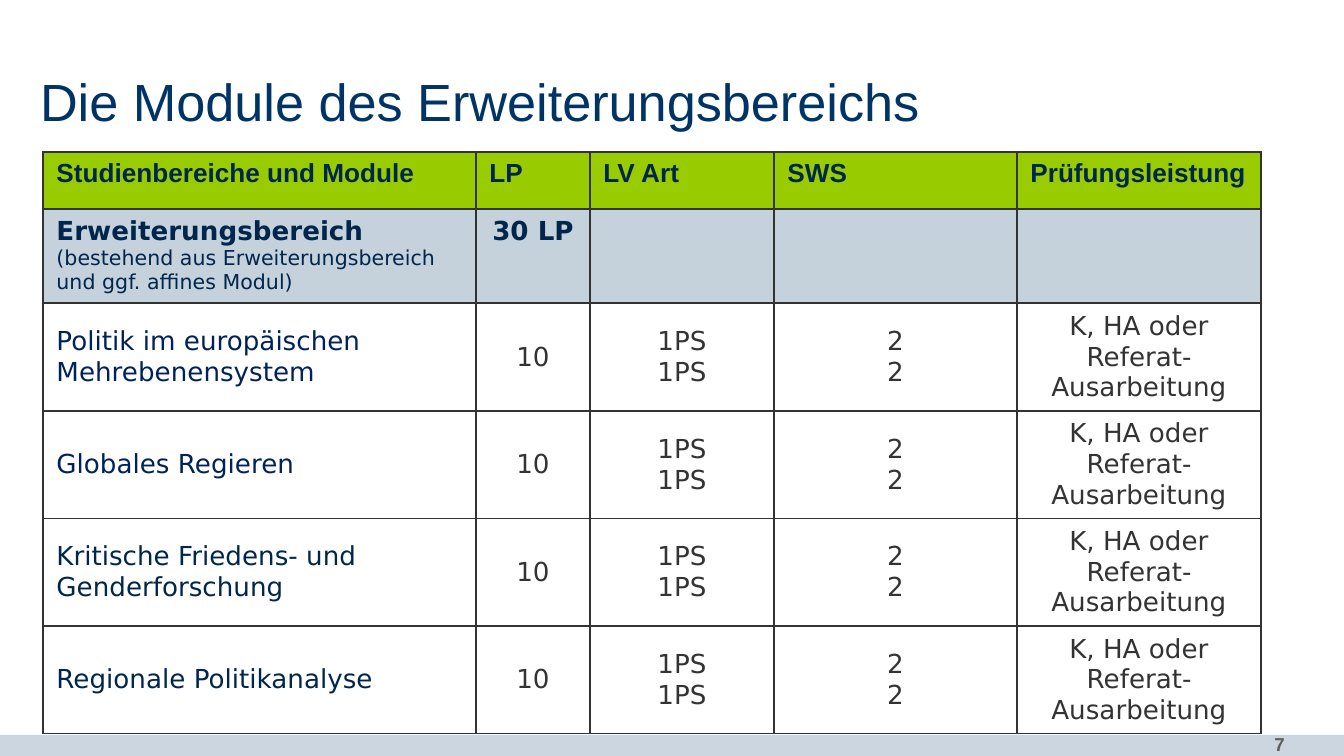
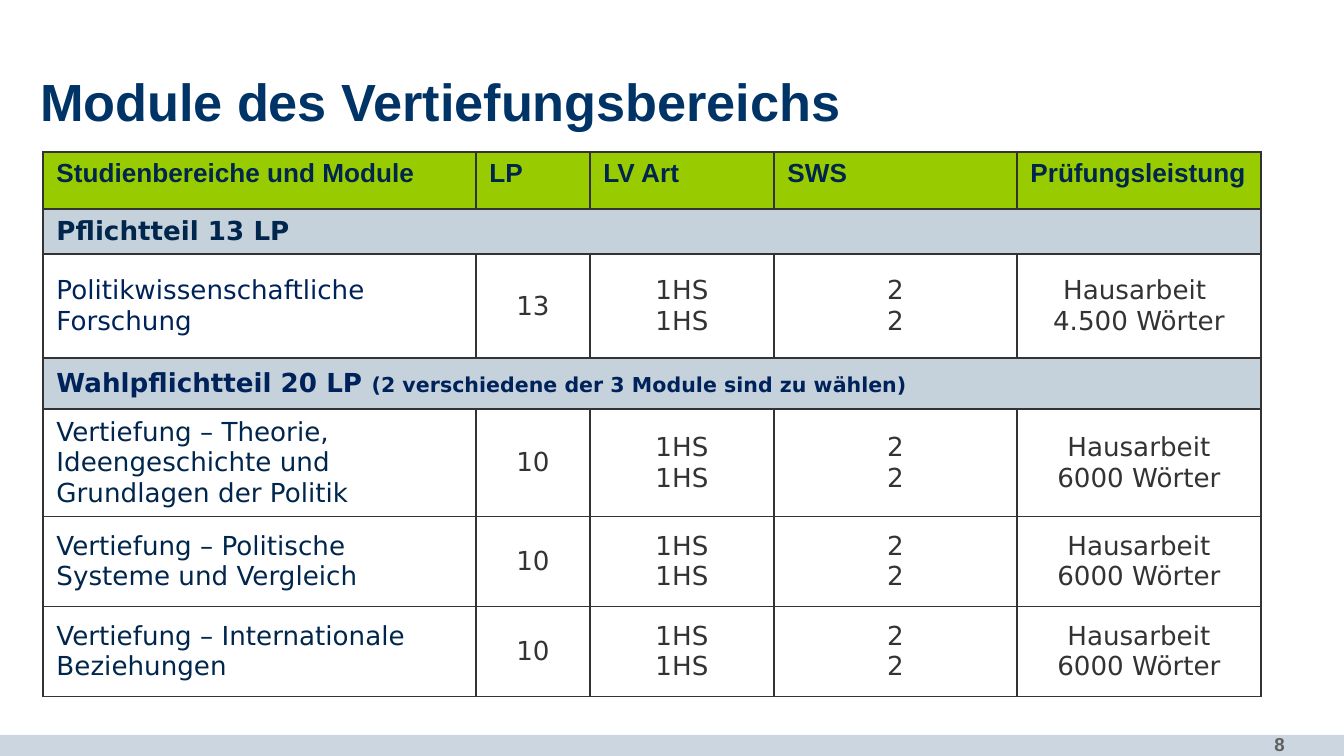
from lxml.etree import SubElement
from pptx import Presentation
from pptx.dml.color import RGBColor
from pptx.enum.shapes import MSO_SHAPE
from pptx.enum.text import MSO_ANCHOR as ANCHOR, MSO_AUTO_SIZE, PP_ALIGN as ALIGN
from pptx.oxml.ns import qn
from pptx.util import Pt

PX = 914400 / 134.4
SLIDE_W, SLIDE_H = 1344, 756
HEAD_FONT, BODY_FONT = "Arial", "DejaVu Sans"
TITLE, NAVY, BLUE, GREY, PAGE = "003366", "00264D", "00225A", "333333", "5F5F5F"
GREEN, STEEL, WHITE, BAND = "99CC00", "C5D1DB", "FFFFFF", "CCD6E0"

HEADER_H = 57
HEADERS = ["Studienbereiche und Module", "LP", "LV Art", "SWS", "Prüfungsleistung"]
COLS = [433, 114, 184, 243, 244]
EXAM = "K, HA oder Referat-Ausarbeitung"
PAPER = "Hausarbeit\n6000 Wörter"


def module(height, name, color, points, kind, exam):
    return dict(height=height, fill=WHITE, anchor=ANCHOR.MIDDLE, color=color,
                cells=[[[(name, 14, False)]]]
                + [[[(line, 14, False)] for line in text.split("\n")]
                   for text in (points, f"{kind}\n{kind}", "2\n2", exam)])


def section(height, cells, color=NAVY, anchor=ANCHOR.TOP):
    return dict(height=height, fill=STEEL, anchor=anchor, color=color, cells=cells)


# Each cell is a list of paragraphs, each paragraph a list of (text, size, bold).
SLIDES = [
    dict(number=7, title="Die Module des Erweiterungsbereichs", bold=False, rows=[
        section(92, [
            [[("Erweiterungsbereich", 14, True)],
             [("(bestehend aus Erweiterungsbereich und ggf. affines Modul)", 11, False)]],
            [[("30 LP", 14, True)]], [], [], []]),
        module(105, "Politik im europäischen Mehrebenensystem", BLUE, "10", "1PS", EXAM),
        module(105, "Globales Regieren", BLUE, "10", "1PS", EXAM),
        module(105, "Kritische Friedens- und Genderforschung", NAVY, "10", "1PS", EXAM),
        module(105, "Regionale Politikanalyse", NAVY, "10", "1PS", EXAM),
    ]),
    dict(number=8, title="Module des Vertiefungsbereichs", bold=True, rows=[
        section(45, [[[("Pflichtteil 13 LP", 14, True)]]]),
        module(104, "Politikwissenschaftliche Forschung", BLUE, "13", "1HS",
               "Hausarbeit \n4.500 Wörter"),
        section(51, [[[("Wahlpflichtteil 20 LP ", 14, True),
                       ("(2 verschiedene der 3 Module sind zu wählen)", 11, True)]]],
                BLUE, ANCHOR.MIDDLE),
        module(106, "Vertiefung – Theorie, Ideengeschichte und Grundlagen der Politik",
               NAVY, "10", "1HS", PAPER),
        module(90, "Vertiefung – Politische Systeme und Vergleich", NAVY, "10", "1HS", PAPER),
        module(90, "Vertiefung – Internationale Beziehungen", NAVY, "10", "1HS", PAPER),
    ]),
]


def px(*lengths):
    return [round(n * PX) for n in lengths]


def rgb(value):
    return RGBColor.from_string(value)


def add_run(p, text, size, color, bold=False, font=HEAD_FONT):
    r = p.add_run()
    r.text = text
    r.font.name, r.font.size, r.font.bold = font, Pt(size), bold
    r.font.color.rgb = rgb(color)


def add_title(s, text, bold):
    sp = s.shapes.title
    sp.left, sp.top, sp.width, sp.height = px(40, 85, 1270, 47)
    tf = sp.text_frame
    tf.auto_size, tf.word_wrap = MSO_AUTO_SIZE.NONE, True
    tf.vertical_anchor = ANCHOR.BOTTOM
    tf.margin_left = tf.margin_right = tf.margin_top = tf.margin_bottom = 0
    p = tf.paragraphs[0]
    p.alignment = ALIGN.LEFT
    add_run(p, text, 28, TITLE, bold)


def add_footer(s, number):
    band = s.shapes.add_shape(MSO_SHAPE.RECTANGLE, *px(0, 735, SLIDE_W, 21))
    band.shadow.inherit = False
    band.fill.solid()
    band.fill.fore_color.rgb = rgb(BAND)
    band.line.fill.background()
    tf = s.shapes.add_textbox(*px(1118, 728, 180, 27)).text_frame
    tf.word_wrap = True
    tf.margin_top = tf.margin_bottom = 0
    tf.vertical_anchor = ANCHOR.BOTTOM
    p = tf.paragraphs[0]
    p.alignment = ALIGN.RIGHT
    add_run(p, str(number), 10, PAGE, True)


def style_cell(cell, fill, anchor):
    tc_pr = cell._tc.get_or_add_tcPr()
    for side in ("lnL", "lnR", "lnT", "lnB"):
        ln = SubElement(tc_pr, qn(f"a:{side}"), w=str(Pt(1)))
        SubElement(SubElement(ln, qn("a:solidFill")), qn("a:srgbClr"), val=GREY)
    cell.fill.solid()
    cell.fill.fore_color.rgb = rgb(fill)
    cell.vertical_anchor = anchor


def fill_cell(cell, paragraphs, color, font, align):
    tf = cell.text_frame
    for i, runs in enumerate(paragraphs):
        p = tf.add_paragraph() if i else tf.paragraphs[0]
        p.alignment = align
        for text, size, bold in runs:
            add_run(p, text, size, color, bold, font)


def add_module_table(s, body):
    header = dict(height=HEADER_H, fill=GREEN, anchor=ANCHOR.TOP, color=NAVY,
                  cells=[[[(text, 14, True)]] for text in HEADERS])
    rows = [header] + body
    height = sum(row["height"] for row in rows)
    table = s.shapes.add_table(len(rows), len(COLS),
                               *px(43, 152, sum(COLS), height)).table
    table.first_row = table.horz_banding = False
    for column, width in zip(table.columns, px(*COLS)):
        column.width = width
    for i, row in enumerate(rows):
        table.rows[i].height = px(row["height"])[0]
        for j in range(len(COLS)):
            style_cell(table.cell(i, j), row["fill"], row["anchor"])
        if len(row["cells"]) == 1:
            table.cell(i, 0).merge(table.cell(i, len(COLS) - 1))
        for j, paragraphs in enumerate(row["cells"]):
            color = GREY if j and row["fill"] == WHITE else row["color"]
            font = BODY_FONT if i else HEAD_FONT
            align = ALIGN.CENTER if i and j else ALIGN.LEFT
            fill_cell(table.cell(i, j), paragraphs, color, font, align)


def main():
    prs = Presentation()
    prs.slide_width, prs.slide_height = px(SLIDE_W, SLIDE_H)
    for page in SLIDES:
        s = prs.slides.add_slide(prs.slide_layouts[5])
        add_footer(s, page["number"])
        add_title(s, page["title"], page["bold"])
        add_module_table(s, page["rows"])
    prs.save("out.pptx")


if __name__ == "__main__":
    main()
